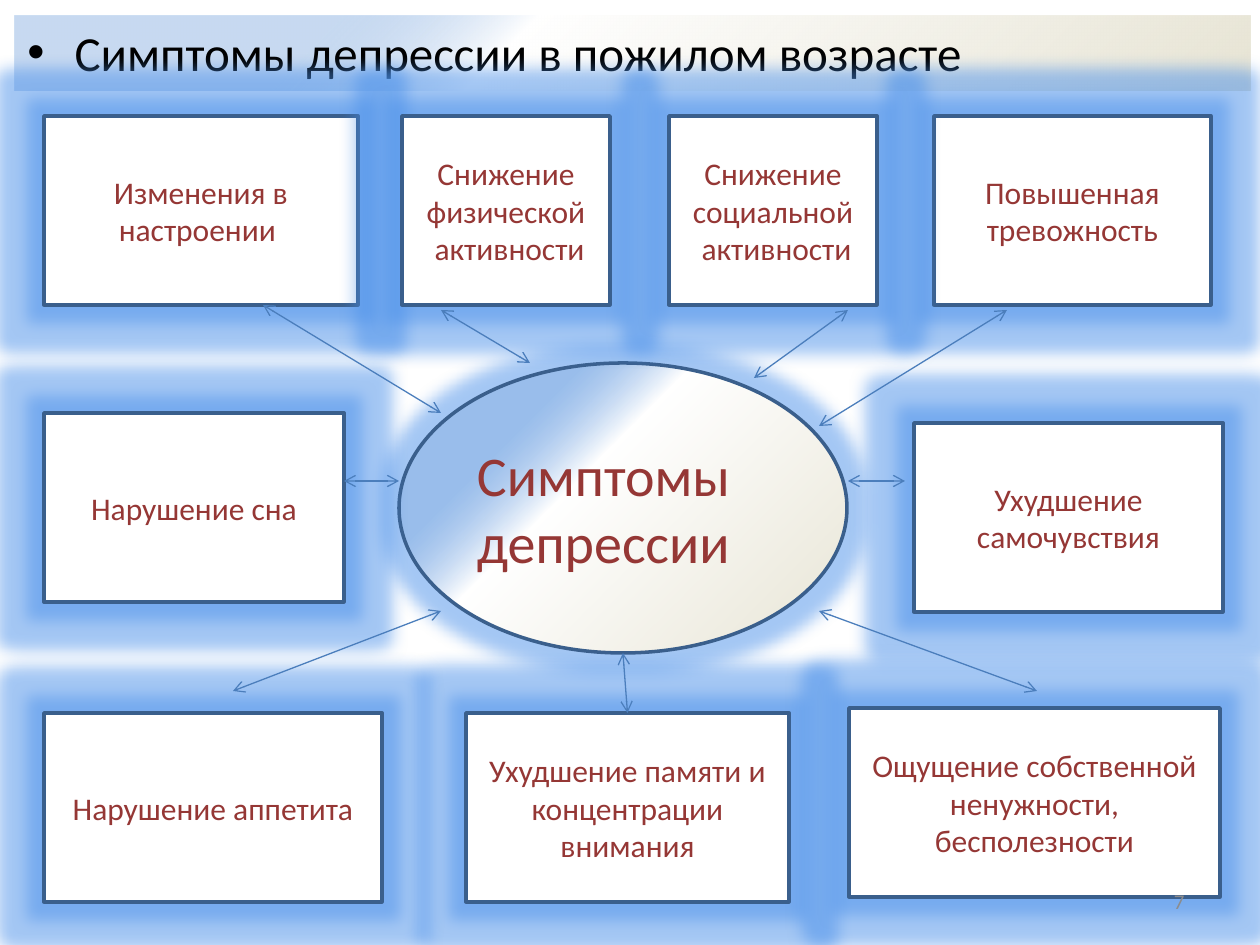
from lxml import etree
from pptx import Presentation
from pptx.dml.color import RGBColor
from pptx.enum.shapes import MSO_CONNECTOR as CONN, MSO_SHAPE as SHAPE
from pptx.enum.text import MSO_ANCHOR as ANCHOR, PP_ALIGN as ALIGN
from pptx.oxml import parse_xml
from pptx.oxml.ns import nsdecls, qn
from pptx.util import Emu, Pt

PX = 914400 / 126
INK, EDGE, ARROW = "953735", "3A5F8C", "4B7EBC"
GRAD = f"""<a:gradFill {nsdecls('a')} rotWithShape="1"><a:gsLst>
<a:gs pos="0"><a:srgbClr val="E7E4D4"/></a:gs>
<a:gs pos="60000"><a:srgbClr val="FFFFFF"/></a:gs>
<a:gs pos="75000"><a:srgbClr val="8EB4E3"><a:alpha val="49000"/></a:srgbClr></a:gs>
</a:gsLst><a:path path="circle"><a:fillToRect l="100000" t="100000"/></a:path></a:gradFill>"""
GLOW = f"""<a:glow {nsdecls('a')} rad="228600"><a:srgbClr val="4A90EA">
<a:alpha val="50000"/></a:srgbClr></a:glow>"""


def color(code):
    return RGBColor.from_string(code)


def write(shape, text, size, ink, align, anchor=ANCHOR.MIDDLE):
    frame = shape.text_frame
    frame.word_wrap = True
    frame.vertical_anchor = anchor
    frame.text = text
    for para in frame.paragraphs:
        para.alignment = align
        for run in para.runs:
            run.font.name = "Calibri"
            run.font.size = Pt(size)
            run.font.color.rgb = color(ink)


prs = Presentation()
prs.slide_width, prs.slide_height = Emu(9144000), Emu(6858000)
slide = prs.slides.add_slide(prs.slide_layouts[6])
shapes = slide.shapes

# Title bar, hub and symptom boxes: kind, place, text
RECT, OVAL = SHAPE.RECTANGLE, SHAPE.OVAL
items = [
    (RECT, (15, 16, 1235, 75), "Симптомы депрессии в пожилом возрасте"),
    (OVAL, (399, 363, 448, 290), "Симптомы депрессии"),
    (RECT, (44, 116, 314, 189), "Изменения в настроении "),
    (RECT, (402, 116, 208, 189), "Снижение физической\n активности"),
    (RECT, (466, 713, 323, 189), "Ухудшение памяти и концентрации внимания"),
    (RECT, (44, 413, 300, 189), "Нарушение сна"),
    (RECT, (44, 713, 338, 189), "Нарушение аппетита"),
    (RECT, (934, 116, 277, 189), "Повышенная тревожность"),
    (RECT, (914, 423, 309, 189), "Ухудшение самочувствия"),
    (RECT, (669, 116, 208, 189), "Снижение социальной\n активности"),
    (RECT, (849, 708, 371, 189), "Ощущение собственной ненужности, бесполезности"),
]
made = []
for i, (kind, place, text) in enumerate(items):
    shape = shapes.add_shape(kind, *[Emu(round(n * PX)) for n in place])
    made.append(shape)
    shape.shadow.inherit = False
    props = shape._element.spPr
    if i < 2:
        props.find(qn("a:prstGeom")).addnext(parse_xml(GRAD))
    else:
        shape.fill.solid()
        shape.fill.fore_color.rgb = color("FFFFFF")
    if i == 0:
        shape.line.fill.background()
        write(shape, text, 28, "000000", ALIGN.LEFT, ANCHOR.TOP)
        continue
    shape.line.color.rgb = color(EDGE)
    shape.line.width = Pt(2)
    props.find(qn("a:effectLst")).append(parse_xml(GLOW))
    if kind == OVAL:
        write(shape, text, 32, INK, ALIGN.LEFT)
    else:
        write(shape, text, 18, INK, ALIGN.CENTER)

title, memory = made[0], made[4]
para = title.text_frame.paragraphs[0]._p.get_or_add_pPr()
para.set("marL", "342900")
para.set("indent", "-342900")
etree.SubElement(para, qn("a:buFont")).set("typeface", "Arial")
etree.SubElement(para, qn("a:buChar")).set("char", "•")

# Double-headed arrows between the hub and the boxes
arrows = [
    (263, 305, 441, 413), (441, 310, 530, 363), (1007, 310, 819, 426),
    (344, 481, 399, 481), (623, 653, 628, 713), (754, 378, 848, 310),
    (848, 481, 905, 481), (1037, 691, 819, 611), (441, 611, 233, 691),
]
for ends in arrows:
    arrow = shapes.add_connector(CONN.STRAIGHT, *[Emu(round(n * PX)) for n in ends])
    if ends[3] == 713:
        arrow.end_connect(memory, 0)
    arrow.line.color.rgb = color(ARROW)
    arrow.line.width = Pt(0.75)
    line = arrow.line._get_or_add_ln()
    for tip in ("a:headEnd", "a:tailEnd"):
        etree.SubElement(line, qn(tip)).set("type", "arrow")
    etree.SubElement(arrow._element.spPr, qn("a:effectLst"))

number = shapes.add_textbox(*[Emu(round(n * PX)) for n in (903, 876, 294, 50)])
write(number, "7", 12, "8C8C8C", ALIGN.RIGHT)

prs.save("out.pptx")
